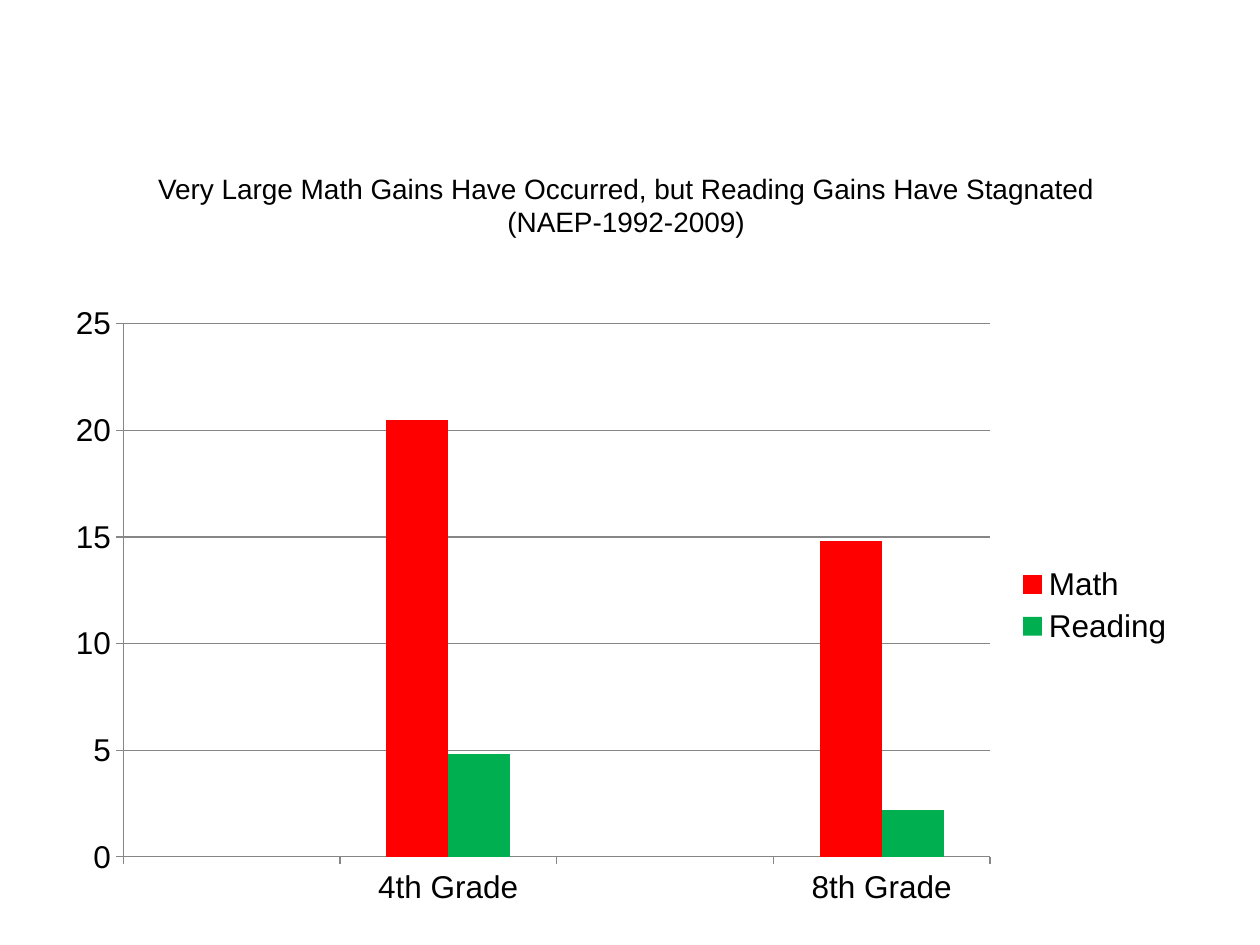
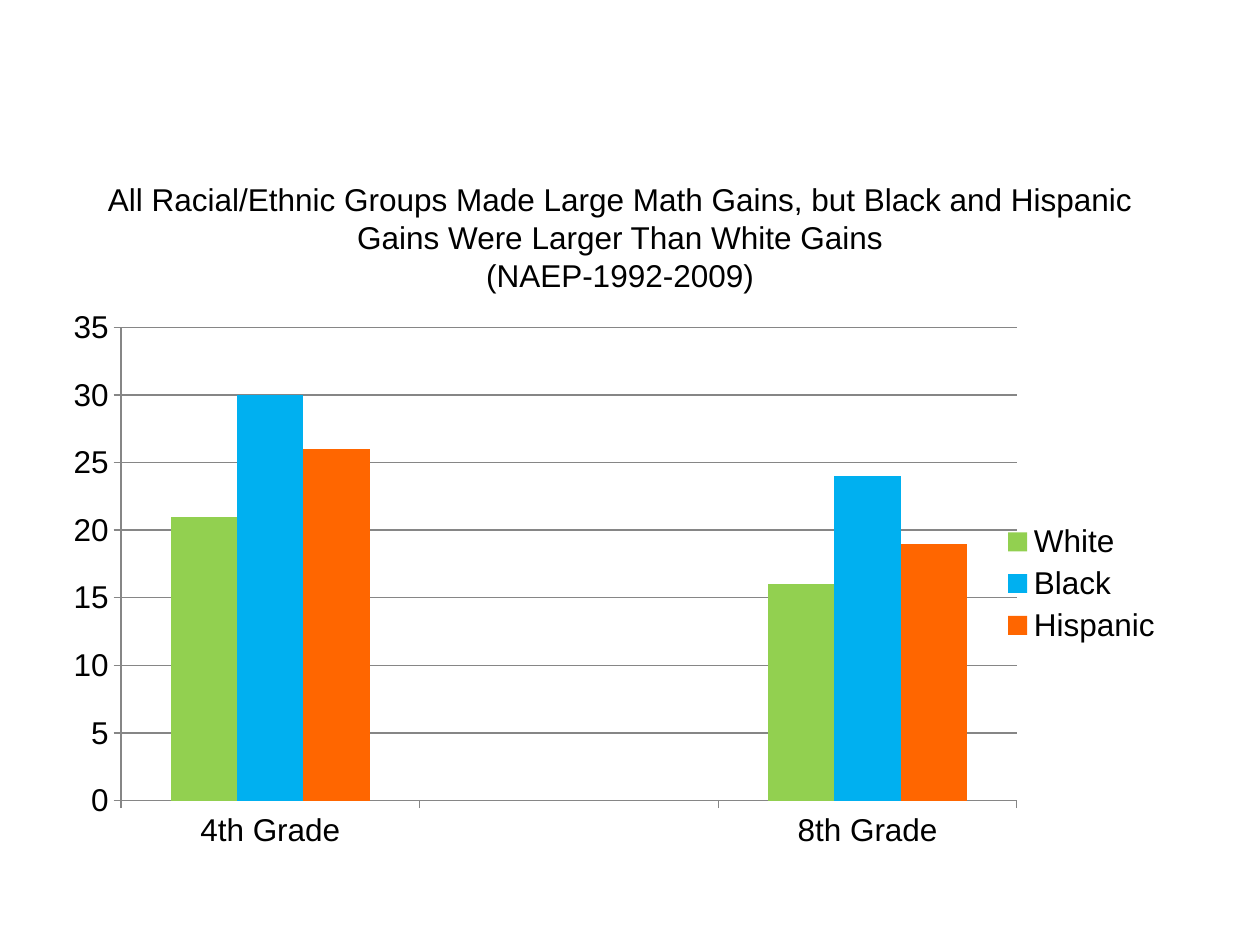
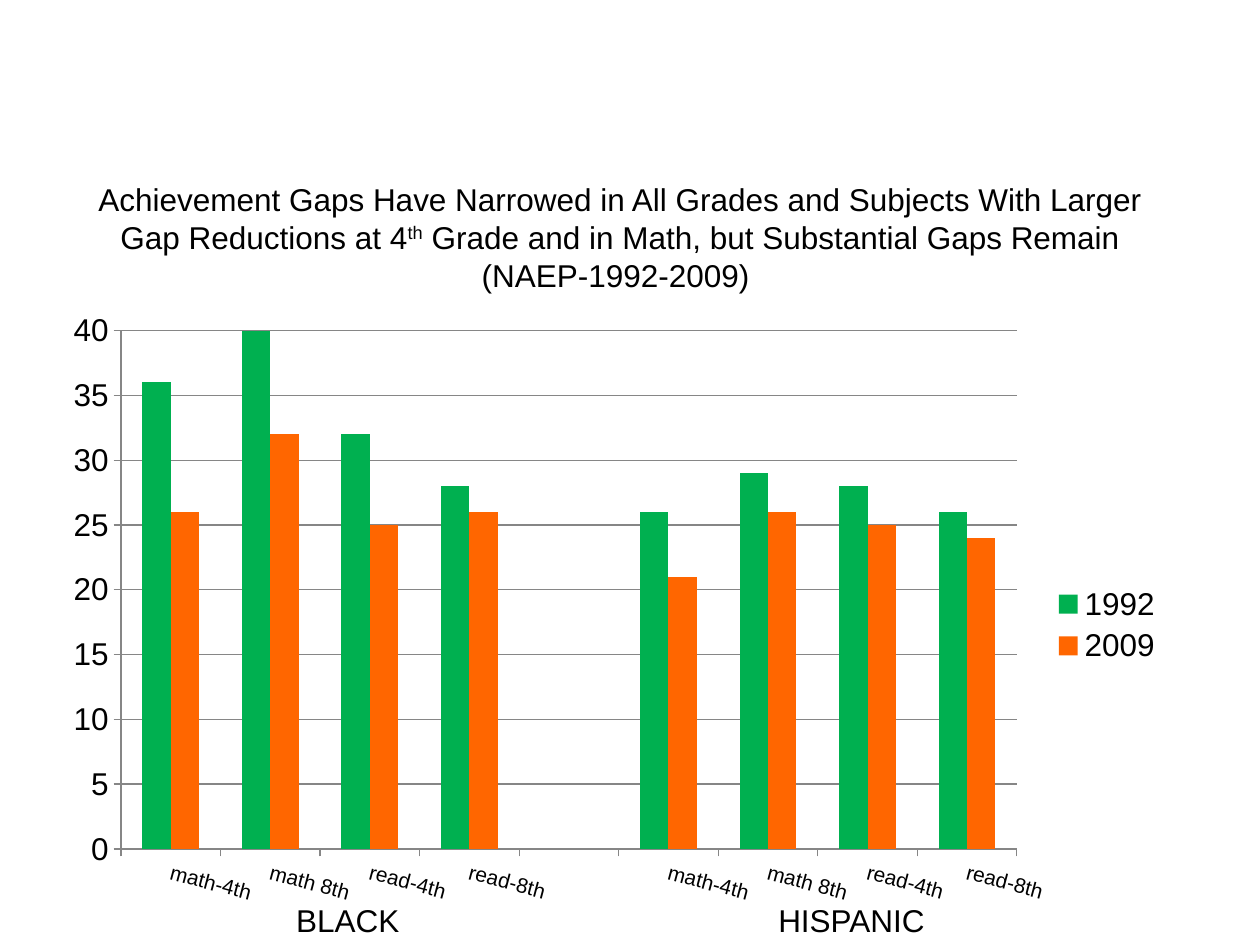
from lxml import etree
from pptx import Presentation
from pptx import util as u
from pptx.chart.data import CategoryChartData
from pptx.dml.color import RGBColor
from pptx.enum import chart as ch, text
from pptx.oxml.ns import qn

BLACK = RGBColor(0x00, 0x00, 0x00)
GREY = RGBColor(0x86, 0x86, 0x86)
RED = RGBColor(0xFF, 0x00, 0x00)
GREEN = RGBColor(0x00, 0xB0, 0x50)
LIME = RGBColor(0x92, 0xD0, 0x50)
SKY = RGBColor(0x00, 0xB0, 0xF0)
ORANGE = RGBColor(0xFF, 0x66, 0x00)

UPPER_TITLE = (1.27, 2.54, 22.86, 3.18)
LOWER_TITLE = (1.07, 3.18, 22.86, 3.18)


class Deck:
    """Holds the shared style and the current slide."""

    font = {"name": "Arial", "size": u.Pt(18)}

    def __init__(self):
        self.prs = Presentation()
        self.prs.slide_width, self.prs.slide_height = u.Cm(25.4), u.Cm(19.05)

    def style(self, font, **changes):
        for key, value in {**self.font, **changes}.items():
            setattr(font, key, value)
        font.color.rgb = BLACK

    def slide(self):
        self.s = self.prs.slides.add_slide(self.prs.slide_layouts[5])

    def title(self, box, lines, size=18):
        sp = self.s.shapes.title
        for key, value in zip(("left", "top", "width", "height"), box):
            setattr(sp, key, u.Cm(value))
        tf = sp.text_frame
        for key, value in {"word_wrap": True, "auto_size": text.MSO_AUTO_SIZE.NONE,
                           "vertical_anchor": text.MSO_ANCHOR.MIDDLE}.items():
            setattr(tf, key, value)
        p = tf.paragraphs[0]
        p.alignment = text.PP_ALIGN.CENTER
        for i, line in enumerate(lines):
            if i:
                p.add_line_break()
            for j, part in enumerate(line.split("^")):
                r = p.add_run()
                r.text = part
                self.style(r.font, size=u.Pt(size))
                if j % 2:
                    r.font._element.set("baseline", "30000")

    def label(self, box, words):
        tf = self.s.shapes.add_textbox(*map(u.Cm, box)).text_frame
        tf.word_wrap = False
        tf.auto_size = text.MSO_AUTO_SIZE.SHAPE_TO_FIT_TEXT
        r = tf.paragraphs[0].add_run()
        r.text = words
        self.style(r.font)

    def columns(self, box, cats, series, top, plot=None):
        data = CategoryChartData()
        data.categories = cats
        for name, values, _ in series:
            data.add_series(name, values)
        chart = self.s.shapes.add_chart(
            ch.XL_CHART_TYPE.COLUMN_CLUSTERED, *map(u.Cm, box), data).chart
        self.style(chart.font)
        chart.has_title = False
        chart.has_legend = True
        chart.legend.position = ch.XL_LEGEND_POSITION.RIGHT
        chart.legend.include_in_layout = False
        bars = chart.plots[0]
        bars.gap_width, bars.overlap, bars.vary_by_categories = 150, 0, False
        for bar, (_, _, color) in zip(bars.series, series):
            bar.format.fill.solid()
            bar.format.fill.fore_color.rgb = color
            bar.invert_if_negative = False
        val = chart.value_axis
        for key, value in {"minimum_scale": 0, "maximum_scale": top, "major_unit": 5,
                           "has_major_gridlines": True}.items():
            setattr(val, key, value)
        for axis in (chart.category_axis, val):
            axis.major_tick_mark = ch.XL_TICK_MARK.OUTSIDE
            self.line(axis)
        self.line(val.major_gridlines)
        if plot:
            self.place_plot(chart, plot)
        return chart

    def line(self, part):
        part.format.line.color.rgb = GREY
        part.format.line.width = u.Pt(0.75)

    def place_plot(self, chart, plot):
        area = chart._chartSpace.find(".//" + qn("c:plotArea"))
        for old in area.findall(qn("c:layout")):
            area.remove(old)
        layout = etree.Element(qn("c:layout"))
        manual = etree.SubElement(layout, qn("c:manualLayout"))
        values = ("inner", "edge", "edge", *plot)
        for tag, value in zip(("layoutTarget", "xMode", "yMode", "x", "y", "w", "h"), values):
            etree.SubElement(manual, qn("c:" + tag)).set("val", str(value))
        area.insert(0, layout)

    def slant_labels(self, axis, size, degrees):
        self.style(axis.tick_labels.font, size=u.Pt(size))
        axis._element.find(qn("c:txPr")).find(qn("a:bodyPr")).set("rot", str(degrees * 60000))


def main():
    deck = Deck()

    deck.slide()
    deck.title(UPPER_TITLE, [
        "Very Large Math Gains Have Occurred, but Reading Gains Have Stagnated ",
        "(NAEP-1992-2009) "], size=16)
    deck.columns((1.07, 5.92, 22.86, 12.57), ["", "4th Grade", "", "8th Grade"], [
        ("Math", (None, 20.5, None, 14.8), RED),
        ("Reading", (None, 4.8, None, 2.2), GREEN)], top=25)

    deck.slide()
    deck.title(LOWER_TITLE, [
        "All Racial/Ethnic Groups Made Large Math Gains, but Black and Hispanic "
        "Gains Were Larger Than White Gains",
        " (NAEP-1992-2009) "])
    deck.columns((0.84, 6.15, 22.86, 11.23), ["4th Grade", "", "8th Grade"], [
        ("White", (21, None, 16), LIME),
        ("Black", (30, None, 24), SKY),
        ("Hispanic", (26, None, 19), ORANGE)], top=35, plot=(0.07, 0.04, 0.79, 0.85))

    deck.slide()
    deck.title(LOWER_TITLE, [
        "Achievement Gaps Have Narrowed in All Grades and Subjects With Larger "
        "Gap Reductions at 4^th^ Grade and in Math, but Substantial Gaps Remain",
        "(NAEP-1992-2009) "])
    tests = ["math-4th", "math 8th", "read-4th", "read-8th"]
    chart = deck.columns((0.84, 6.15, 22.86, 12.9), [*tests, "", *tests], [
        ("1992", (36, 40, 32, 28, None, 26, 29, 28, 26), GREEN),
        ("2009", (26, 32, 25, 26, None, 21, 26, 25, 24), ORANGE)],
        top=40, plot=(0.07, 0.04, 0.79, 0.81))
    deck.slant_labels(chart.category_axis, 12, 15)
    deck.label((5.72, 18.03, 2.62, 1.02), "BLACK")
    deck.label((15.44, 18.03, 3.51, 1.02), "HISPANIC")

    deck.prs.save("out.pptx")


if __name__ == "__main__":
    main()
